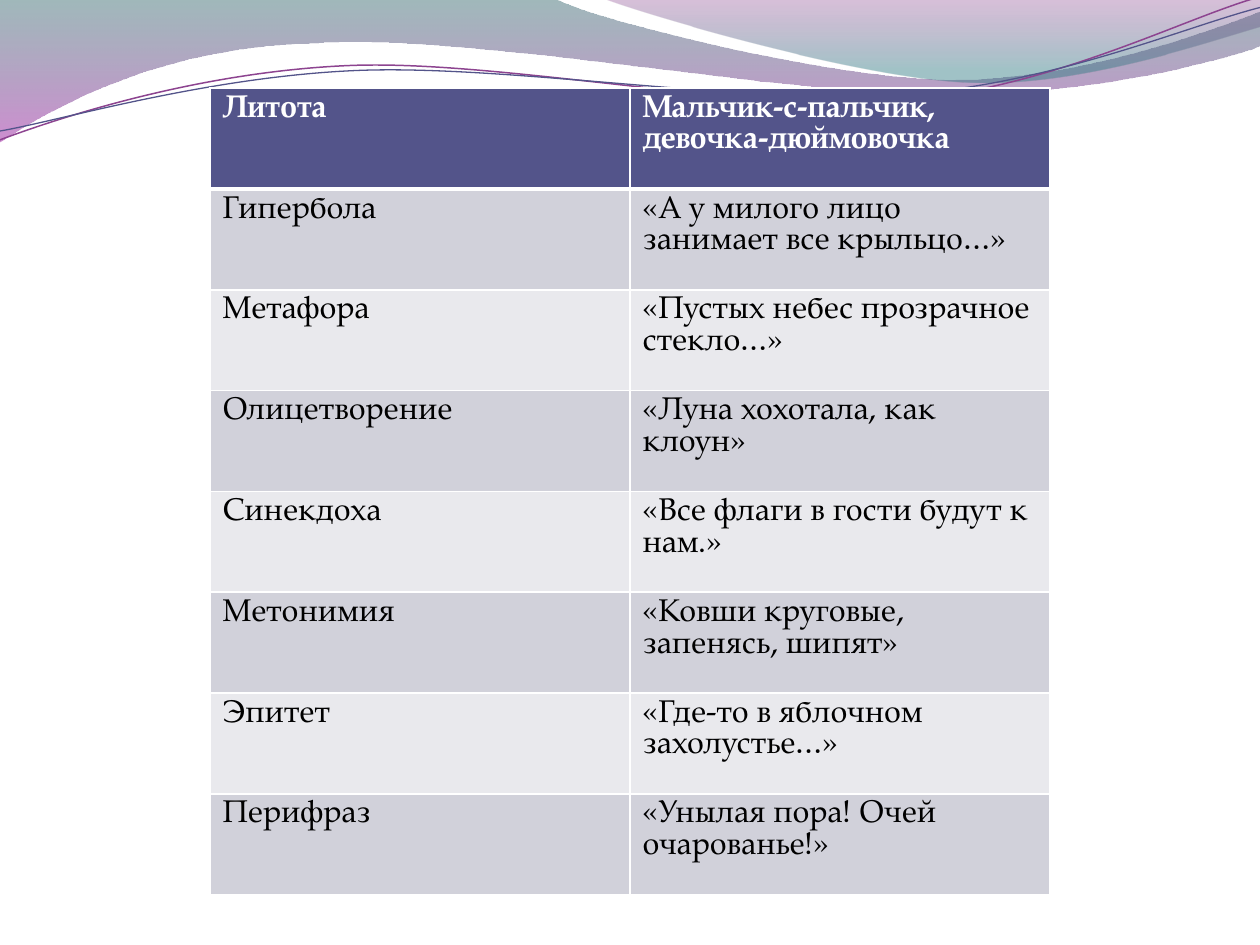
from math import cos, radians, sin

from lxml import etree
from pptx import Presentation
from pptx.dml.color import RGBColor
from pptx.oxml.ns import qn
from pptx.util import Inches, Pt

COLORS = {
    "teal": "2D6368", "orchid": "A530A9",
    "plum": "7F2F82", "lagoon": "2F7B82",
    "violet": "8D4490", "indigo": "53548A",
    "band_dark": "D1D1DA", "band_light": "E9E9ED",
    "white": "FFFFFF", "black": "000000",
}
FONT = "TeX Gyre Pagella"
STRAND_TILT = 2.7

TROPES = [
    ("Литота", "Мальчик-с-пальчик, девочка-дюймовочка"),
    ("Гипербола", "«А у милого лицо занимает все крыльцо…»"),
    ("Метафора", "«Пустых небес прозрачное стекло…»"),
    ("Олицетворение", "«Луна хохотала, как клоун»"),
    ("Синекдоха", "«Все флаги в гости будут к нам.»"),
    ("Метонимия", "«Ковши круговые, запенясь, шипят»"),
    ("Эпитет", "«Где-то в яблочном захолустье…»"),
    ("Перифраз", "«Унылая пора! Очей очарованье!»"),
]

LEFT_WAVE = [
    [(0, 0)], [(4.4, -0.01)],
    [(4.76, 0.17), (6.64, 0.63), (7.58, 0.63)],
    [(8.53, 0.63), (9.58, 0.26), (10, 0.09)],
    [(10.01, 0.36)],
    [(9.83, 0.44), (8.7, 0.76), (7.46, 0.75)],
    [(6.22, 0.75), (3.82, 0.28), (2.57, 0.34)],
    [(1.29, 0.36), (0.46, 0.83), (-0.01, 1.13)],
    [(0, 0)],
]
RIGHT_WAVE = [
    [(4.79, -0.01)],
    [(5.09, 0.11), (6.82, 0.62), (7.69, 0.65)],
    [(8.56, 0.69), (9.61, 0.32), (10, 0.21)],
    [(10, 0)], [(4.79, -0.01)],
]
VIOLET_STRAND = [
    [(0, 1.11)],
    [(0.48, 0.93), (1.58, 0.57), (2.77, 0.52)],
    [(3.95, 0.47), (5.93, 0.89), (7.13, 0.8)],
    [(8.33, 0.71), (9.38, 0.15), (9.98, -0.02)],
]
INDIGO_STRAND = [
    [(0, 1.04)],
    [(0.47, 0.96), (1.64, 0.61), (2.83, 0.56)],
    [(4.03, 0.51), (5.97, 0.84), (7.17, 0.75)],
    [(8.36, 0.67), (9.41, 0.21), (10, 0.06)],
]


def rgb(name):
    return RGBColor.from_string(COLORS[name])


def turn(point, degrees, center):
    c, s = cos(radians(degrees)), sin(radians(degrees))
    dx, dy = point[0] - center[0], point[1] - center[1]
    return center[0] + dx * c - dy * s, center[1] + dx * s + dy * c


class SlidePainter:
    def __init__(self, slide, font, size):
        self.slide = slide
        self.font = font
        self.size = size

    def outline(self, steps, close):
        start, *rest = [(Inches(x), Inches(y)) for step in steps for x, y in step]
        builder = self.slide.shapes.build_freeform(*start)
        builder.add_line_segments(rest, close=close)
        shape = builder.convert_to_shape()
        shape.shadow.inherit = False
        segments = iter(list(shape._element.spPr.iter(qn("a:lnTo"))))
        for step in steps[1:]:
            curve, *others = [next(segments) for _ in step]
            if others:
                bezier = etree.Element(qn("a:cubicBezTo"))
                curve.addprevious(bezier)
                for segment in (curve, *others):
                    bezier.append(segment[0])
                    segment.getparent().remove(segment)
        return shape

    def wave(self, steps, stops):
        shape = self.outline(steps, True)
        shape.line.fill.background()
        shape.fill.gradient()
        shape.fill.gradient_angle = 270
        for stop, (position, color, _) in zip(shape.fill.gradient_stops, stops):
            stop.position = position
            stop.color.rgb = rgb(color)
        tints = shape._element.spPr.iter(qn("a:srgbClr"))
        for tint, (_, _, opacity) in zip(tints, stops):
            etree.SubElement(tint, qn("a:alpha"), val=str(opacity * 1000))

    def strand(self, steps, color, width, center):
        level = [[turn(point, STRAND_TILT, center) for point in step] for step in steps]
        shape = self.outline(level, False)
        shape.rotation = 360 - STRAND_TILT
        shape.fill.background()
        shape.line.color.rgb = rgb(color)
        shape.line.width = Pt(width)

    def border(self, cell, side, width):
        edge = etree.SubElement(cell._tc.get_or_add_tcPr(), qn(f"a:ln{side}"), w=str(Pt(width)))
        fill = etree.SubElement(edge, qn("a:solidFill"))
        etree.SubElement(fill, qn("a:srgbClr"), val=COLORS["white"])

    def cell(self, cell, text, row):
        header = row == 0
        widths = {"L": 1, "R": 1, "T": 3 if row == 1 else 1, "B": 3 if header else 1}
        for side, width in widths.items():
            self.border(cell, side, width)
        cell.fill.solid()
        band = "band_dark" if row % 2 else "band_light"
        cell.fill.fore_color.rgb = rgb("indigo" if header else band)
        cell.text = text
        font = cell.text_frame.paragraphs[0].runs[0].font
        for name, value in {"name": self.font, "size": self.size, "bold": header}.items():
            setattr(font, name, value)
        font.color.rgb = rgb("white" if header else "black")

    def table(self, rows, left, top, width, height):
        grid = self.slide.shapes.add_table(
            len(rows), len(rows[0]), left, top, width, height).table
        for r, texts in enumerate(rows):
            for c, text in enumerate(texts):
                self.cell(grid.cell(r, c), text, r)


def main():
    deck = Presentation()
    deck.slide_width, deck.slide_height = Inches(10), Inches(7.5)
    painter = SlidePainter(deck.slides.add_slide(deck.slide_layouts[6]), FONT, Pt(18))
    painter.wave(LEFT_WAVE, [(0, "teal", 45), (1, "orchid", 55)])
    painter.wave(RIGHT_WAVE, [(0, "plum", 30), (0.8, "lagoon", 45)])
    painter.strand(VIOLET_STRAND, "violet", 0.85, (4.99, 0.58))
    painter.strand(INDIGO_STRAND, "indigo", 0.75, (5, 0.59))
    painter.table(TROPES, Inches(10 / 6), Inches(0.7), Inches(10 * 2 / 3), Inches(6.4))
    deck.save("out.pptx")


if __name__ == "__main__":
    main()
